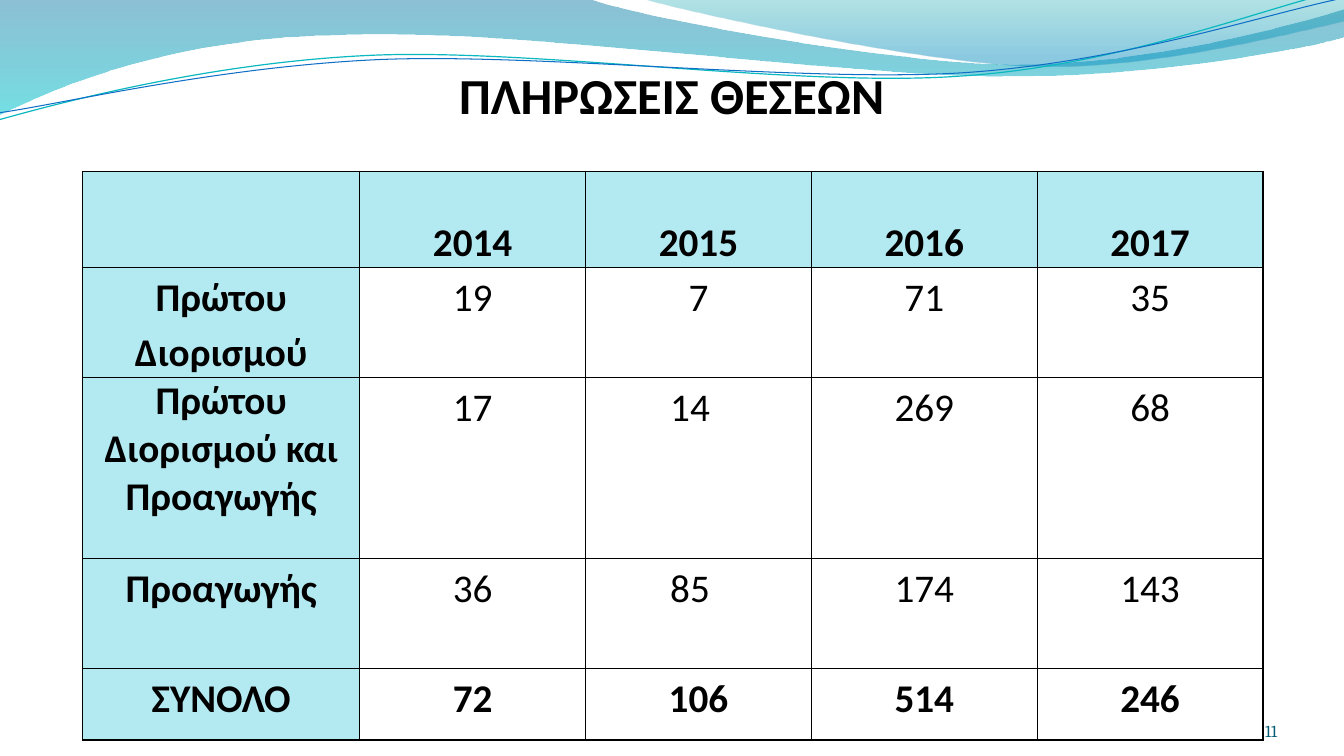
from math import cos, radians, sin

from lxml import etree
from pptx import Presentation
from pptx.dml.color import RGBColor
from pptx.enum import text as t
from pptx.oxml import ns
from pptx.util import Pt

# Content
TITLE = "ΠΛΗΡΩΣΕΙΣ ΘΕΣΕΩΝ"
PAGE = "11"
ROWS = [
    ("", "2014", "2015", "2016", "2017"),
    ("Πρώτου Διορισμού", "19", "7", "71", "35"),
    ("Πρώτου Διορισμού και Προαγωγής", "17", "14", "269", "68"),
    ("Προαγωγής", "36", "85", "174", "143"),
    ("ΣΥΝΟΛΟ", "72", "106", "514", "246"),
]
WIDTHS = [198] + [161.3] * 4
HEIGHTS = [48.2, 78.5, 129.2, 78.5, 51.4]
INSET = 4.5
NUDGED = {(2, 2), (3, 2)}  # figures set a little left of centre

BLACK = RGBColor(0, 0, 0)
WHITE = RGBColor(255, 255, 255)
AQUA = RGBColor(0xB3, 0xEA, 0xF2)
TEAL = RGBColor(0x04, 0x5D, 0x75)
DEEP = RGBColor(0x00, 0x74, 0xA1)
CYAN = RGBColor(0x00, 0xC6, 0xCF)
SEA = RGBColor(0x00, 0xA1, 0xA9)
SKY = RGBColor(0x00, 0x8B, 0xBF)
MINT = RGBColor(0x0A, 0xB8, 0xBF)
BLUE = RGBColor(0x0F, 0x6F, 0xC6)

# Waves in points: a pair is a straight step, six numbers are a curve
BANDS = [
    ([(-0.5, 0), (422.5, -0.5), (456.5, 12, 637, 45.5, 728, 45.5),
      (819.5, 45.5, 920, 18.5, 960, 6.5), (961, 26),
      (944, 31.5, 835, 54.5, 715.5, 54), (597, 54, 366.5, 20, 247, 24.5),
      (124, 26, 44, 60, -0.5, 81.5)],
     [(0, DEEP, 45), (1, CYAN, 55)]),
    ([(460, -0.5), (489, 8, 654.5, 44.5, 738, 47),
      (821.5, 49.5, 923, 23, 960, 15), (960, 0)],
     [(0, SEA, 30), (0.8, SKY, 45)]),
]
TILT = -2.7
LINES = [  # steps, centre of the tilt, colour, weight
    ([(-0.5, 85.5), (46, 72.5, 152, 44.5, 265.5, 39.5),
      (379.5, 34.5, 569, 62.5, 684, 54.5), (799, 47.5, 901.5, 6, 958.5, -7)],
     (479, 41.4), MINT, 0.85),
    ([(0, 80.5), (45.5, 74, 157, 47.5, 272, 42.5),
      (386.5, 38, 573, 59, 687.5, 52), (803, 44.5, 903.5, 10, 960, -1.5)],
     (480, 42.5), BLUE, 0.75),
]


def turn(step, mid, angle):
    """Rotate every point of a step about mid."""
    co, si = cos(radians(angle)), sin(radians(angle))
    out = []
    for x, y in zip(step[::2], step[1::2]):
        dx, dy = x - mid[0], y - mid[1]
        out += [mid[0] + dx * co - dy * si, mid[1] + dx * si + dy * co]
    return tuple(out)


def draw(steps, close):
    """Lay out all points, then join each group of three into a curve."""
    dots = [(Pt(x), Pt(y)) for s in steps for x, y in zip(s[::2], s[1::2])]
    pen = slide.shapes.build_freeform(*dots[0], scale=1.0)
    pen.add_line_segments(dots[1:], close=close)
    wave = pen.convert_to_shape()
    wave.shadow.inherit = False
    legs = iter(list(wave._element.iter(ns.qn("a:lnTo"))))
    for step in steps[1:]:
        group = [next(legs) for _ in range(len(step) // 2)]
        if len(group) == 3:
            curve = etree.Element(ns.qn("a:cubicBezTo"))
            group[0].addprevious(curve)
            for leg in group:
                curve.append(leg[0])
                leg.getparent().remove(leg)
    return wave


def write(par, words, font, size, color, bold=False):
    run = par.add_run()
    run.text = words
    run.font.name = font
    run.font.size = Pt(size)
    run.font.bold = bold
    run.font.color.rgb = color


def frame(box, left, top, width, height, inset=0):
    box.left, box.top, box.width, box.height = map(Pt, (left, top, width, height))
    body = box.text_frame
    body.word_wrap = True
    body.auto_size = t.MSO_AUTO_SIZE.NONE
    body.vertical_anchor = t.MSO_ANCHOR.BOTTOM
    body.margin_left = body.margin_right = body.margin_bottom = 0
    body.margin_top = Pt(inset)
    return body.paragraphs[0]


def border(cell):
    props = cell._tc.get_or_add_tcPr()
    for i, side in enumerate(("lnL", "lnR", "lnT", "lnB")):
        edge = etree.Element(ns.qn("a:" + side), w=str(Pt(1)))
        fill = etree.SubElement(edge, ns.qn("a:solidFill"))
        etree.SubElement(fill, ns.qn("a:srgbClr"), val=str(BLACK))
        props.insert(i, edge)


deck = Presentation()
deck.slide_width, deck.slide_height = Pt(960), Pt(540)
slide = deck.slides.add_slide(deck.slide_layouts[5])

# Waves at the top
for steps, stops in BANDS:
    band = draw(steps, True)
    band.line.fill.background()
    band.fill.gradient()
    band.fill.gradient_angle = 270
    for stop, (place, color, alpha) in zip(band.fill.gradient_stops, stops):
        stop.position = place
        stop.color.rgb = color
        tint = stop._gs.find(ns.qn("a:srgbClr"))
        etree.SubElement(tint, ns.qn("a:alpha"), val=str(alpha * 1000))
for steps, mid, color, weight in LINES:
    curve = draw([turn(step, mid, -TILT) for step in steps], False)
    curve.rotation = TILT
    curve.fill.background()
    curve.line.color.rgb = color
    curve.line.width = Pt(weight)

# Title, in front of the waves
title = slide.shapes.title
slide.shapes._spTree.append(title._element)
par = frame(title, 156, 55.4, 648, 33.8, 3.6)
par.alignment = t.PP_ALIGN.CENTER
write(par, TITLE, "Calibri", 36, BLACK, True)

# Table
table = slide.shapes.add_table(
    len(ROWS), len(WIDTHS), Pt(59), Pt(122.4),
    Pt(sum(WIDTHS)), Pt(sum(HEIGHTS))).table
table.first_row = table.horz_banding = False
for col, width in zip(table.columns, WIDTHS):
    col.width = Pt(width)
for r, row in enumerate(ROWS):
    table.rows[r].height = Pt(HEIGHTS[r])
    for c, words in enumerate(row):
        cell = table.cell(r, c)
        head = r == 0 or c == 0
        cell.fill.solid()
        cell.fill.fore_color.rgb = AQUA if head else WHITE
        border(cell)
        cell.margin_left = Pt(INSET)
        cell.margin_right = Pt(INSET + (12 if (r, c) in NUDGED else 0))
        cell.margin_top = cell.margin_bottom = 0
        if not words:
            continue
        par = cell.text_frame.paragraphs[0]
        par.alignment = t.PP_ALIGN.CENTER
        par.line_spacing = 2.0 if r == 0 else 1.0 if (r, c) == (2, 0) else 1.15
        write(par, words, "Calibri", 28, BLACK, head or r == len(ROWS) - 1)

# Page number
par = frame(slide.shapes.add_textbox(0, 0, 0, 0), 832.3, 500.4, 80, 28.8)
par.alignment = t.PP_ALIGN.RIGHT
write(par, PAGE, "Cambria", 12, TEAL)

deck.save("out.pptx")
